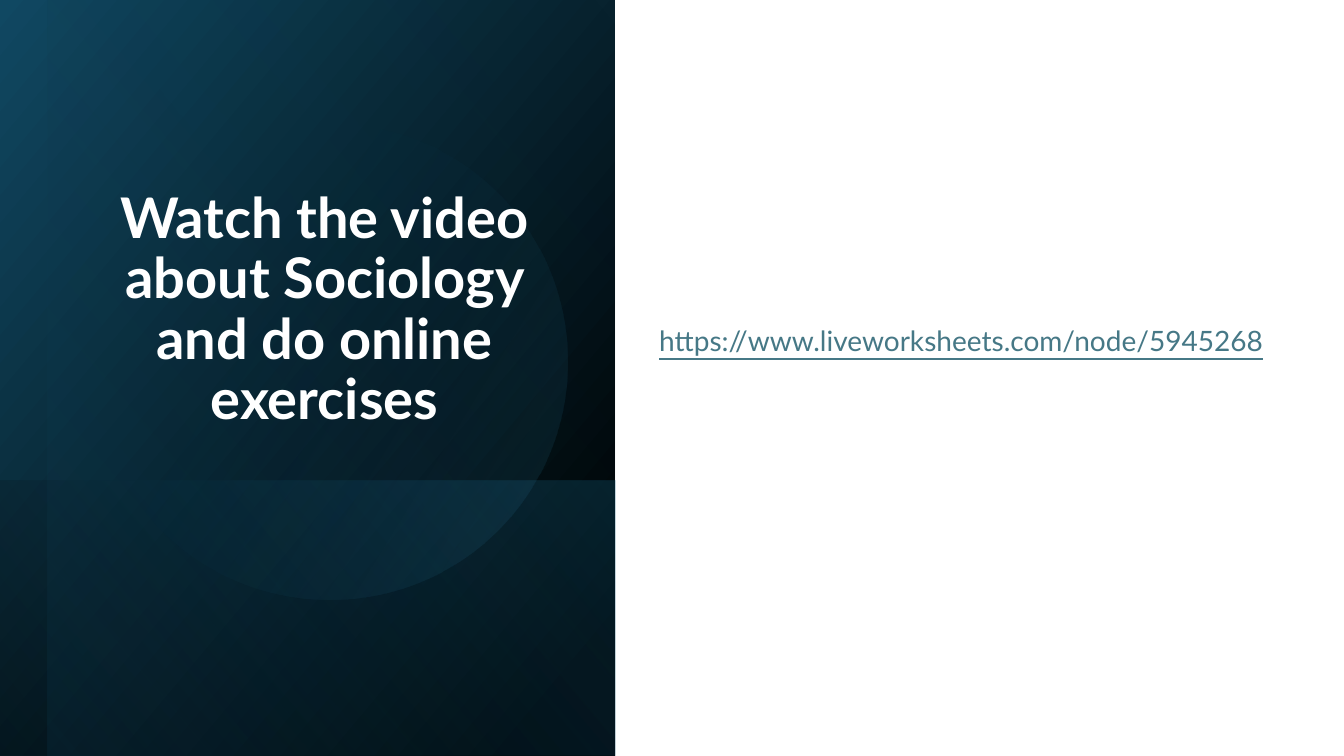
from dataclasses import dataclass

from pptx import Presentation
from pptx.dml.color import RGBColor
from pptx.enum.shapes import MSO_SHAPE as Shape
from pptx.enum.text import MSO_ANCHOR as Anchor, MSO_AUTO_SIZE as AutoSize, PP_ALIGN as Align
from pptx.oxml import parse_xml
from pptx.oxml.ns import nsdecls, qn
from pptx.util import Inches, Pt


@dataclass(frozen=True)
class Theme:
    font: str = "Lato"
    black: str = "000000"
    navy: str = "104862"
    teal: str = "156082"
    sky: str = "46B1E1"
    white: str = "FFFFFF"
    link: str = "467886"
    title_size: int = 40
    link_size: int = 20


THEME = Theme()
WIDTH, HEIGHT = 13.33, 7.5
PANEL_WIDTH = 6.1


def gradient_xml(stops, angle):
    stop_xml = "".join(
        f'<a:gs pos="{position * 1000}"><a:srgbClr val="{color}">'
        f'<a:alpha val="{opacity * 1000}"/></a:srgbClr></a:gs>'
        for position, color, opacity in stops
    )
    return parse_xml(
        f'<a:gradFill {nsdecls("a")} rotWithShape="1"><a:gsLst>{stop_xml}</a:gsLst>'
        f'<a:lin ang="{angle * 60000}" scaled="0"/></a:gradFill>'
    )


def add_glow(slide, box, stops, angle, preset=Shape.RECTANGLE, rotation=90, mirrored=True):
    left, top, width, height = box
    turned_left = left + (width - height) / 2
    turned_top = top + (height - width) / 2
    glow = slide.shapes.add_shape(
        preset, Inches(turned_left), Inches(turned_top), Inches(height), Inches(width)
    )
    glow.rotation = rotation
    glow.shadow.inherit = False
    glow.line.fill.background()
    glow.fill.gradient()
    properties = glow.element.spPr
    properties.replace(properties.find(qn("a:gradFill")), gradient_xml(stops, angle))
    if mirrored:
        properties.find(qn("a:xfrm")).set("flipH", "1")


def format_text(frame, text, size, color, anchor):
    frame.text = text
    frame.word_wrap = True
    frame.auto_size = AutoSize.NONE
    frame.vertical_anchor = anchor
    paragraph = frame.paragraphs[0]
    paragraph.alignment = Align.CENTER
    paragraph.line_spacing = 0.9
    font = paragraph.runs[0].font
    font.name = THEME.font
    font.size = Pt(size)
    font.color.rgb = RGBColor.from_string(color)
    return font


def add_title_panel(slide, box):
    left, top, width, height = box
    band_height = 0.365 * height
    veil_left = 0.077 * width
    circle = 0.774 * width
    add_glow(slide, box, [(8, THEME.black, 100), (100, THEME.navy, 100)], 50)
    add_glow(slide, (left, top + height - band_height, width, band_height),
             [(2, THEME.teal, 29), (100, THEME.black, 30)], 130)
    add_glow(slide, (left + veil_left, top, width - veil_left, height),
             [(0, THEME.black, 0), (99, THEME.teal, 11)], 130)
    add_glow(slide, (left + 0.148 * width, top + 0.164 * height, circle, circle),
             [(39, THEME.teal, 0), (100, THEME.sky, 15)], 290, Shape.OVAL, 101.6, False)

    title = slide.shapes.title
    title.left, title.top = Inches(left + 0.148 * width), Inches(top + 0.085 * height)
    title.width, title.height = Inches(0.759 * width), Inches(0.493 * height)
    font = format_text(title.text_frame, "Watch the video about Sociology and do online exercises",
                       THEME.title_size, THEME.white, Anchor.BOTTOM)
    font.bold = True
    title.element.getparent().append(title.element)


def add_link_area(slide, box):
    left, top, width, height = box
    link = slide.shapes.add_textbox(
        Inches(left), Inches(top + 0.25 * height), Inches(0.95 * width), Inches(0.456 * height)
    )
    font = format_text(link.text_frame, "https://www.liveworksheets.com/node/5945268",
                       THEME.link_size, THEME.link, Anchor.MIDDLE)
    font.underline = True
    link.text_frame.margin_bottom = Inches(0.42)


def main():
    deck = Presentation()
    deck.slide_width, deck.slide_height = Inches(WIDTH), Inches(HEIGHT)
    slide = deck.slides.add_slide(deck.slide_layouts[5])
    add_title_panel(slide, (0, 0, PANEL_WIDTH, HEIGHT))
    add_link_area(slide, (PANEL_WIDTH, 0, WIDTH - PANEL_WIDTH, HEIGHT))
    deck.save("out.pptx")


if __name__ == "__main__":
    main()
